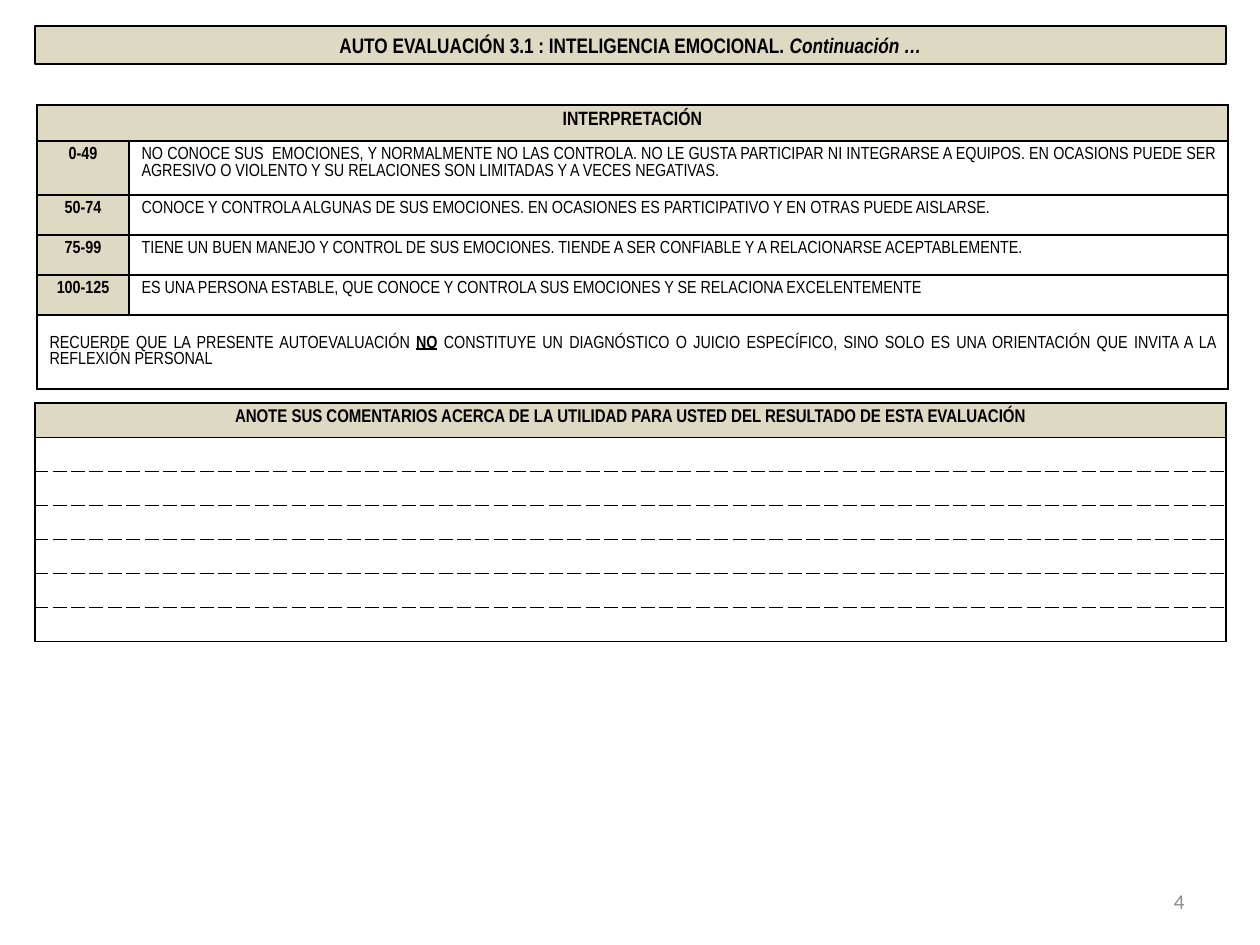
from lxml import etree
from pptx import Presentation, util as u
from pptx.dml.color import RGBColor
from pptx.enum import shapes, text
from pptx.oxml.ns import qn

# Content: each text is a list of (words, style letters) runs
TITLE = [("AUTO EVALUACIÓN 3.1 : INTELIGENCIA EMOCIONAL. ", "b"),
         ("Continuación …", "bi")]
INTERPRETATION = [("INTERPRETACIÓN", "b")]
SCORES = [
    ("0-49", "NO CONOCE SUS  EMOCIONES, Y NORMALMENTE NO LAS CONTROLA. NO LE GUSTA "
             "PARTICIPAR NI INTEGRARSE A EQUIPOS. EN OCASIONS PUEDE SER AGRESIVO O "
             "VIOLENTO Y SU RELACIONES SON LIMITADAS Y A VECES NEGATIVAS."),
    ("50-74", "CONOCE Y CONTROLA ALGUNAS DE SUS EMOCIONES. EN OCASIONES ES "
              "PARTICIPATIVO Y EN OTRAS PUEDE AISLARSE."),
    ("75-99", "TIENE UN BUEN MANEJO Y CONTROL DE SUS EMOCIONES. TIENDE A SER "
              "CONFIABLE Y A RELACIONARSE ACEPTABLEMENTE."),
    ("100-125", "ES UNA PERSONA ESTABLE, QUE CONOCE Y CONTROLA SUS EMOCIONES Y SE "
                "RELACIONA EXCELENTEMENTE"),
]
REMINDER = [("RECUERDE QUE LA PRESENTE AUTOEVALUACIÓN ", ""), ("NO", "bu"),
            (" CONSTITUYE UN DIAGNÓSTICO O JUICIO ESPECÍFICO, SINO SOLO ES UNA "
             "ORIENTACIÓN QUE INVITA A LA REFLEXIÓN PERSONAL", "")]
COMMENTS = [("ANOTE SUS COMENTARIOS ACERCA DE LA UTILIDAD PARA USTED DEL RESULTADO "
             "DE ESTA EVALUACIÓN", "b")]
BLANK_LINES = 6
PAGE = [("4", "")]

BEIGE, BLACK, WHITE, GRAY = "DDD9C3", "000000", "FFFFFF", "8C8C8C"
NARROW = "Arial Narrow"
CENTER, JUSTIFY, RIGHT = (text.PP_ALIGN.CENTER, text.PP_ALIGN.JUSTIFY,
                          text.PP_ALIGN.RIGHT)
MIDDLE = text.MSO_ANCHOR.MIDDLE


def px(n):
    return round(n * 914400 / 126)


def color(value):
    return RGBColor.from_string(value)


def write(frame, runs, size, align, font=NARROW, ink=BLACK):
    paragraph = frame.paragraphs[0]
    paragraph.alignment = align
    for words, style in runs:
        run = paragraph.add_run()
        run.text = words
        run.font.name, run.font.size = font, u.Pt(size)
        run.font.color.rgb = color(ink)
        run.font.bold = "b" in style
        run.font.italic = "i" in style
        run.font.underline = "u" in style


def paint(cell, fill=None, top="solid", bottom="solid"):
    if fill:
        cell.fill.solid()
        cell.fill.fore_color.rgb = color(fill)
    else:
        cell.fill.background()
    # Borders come before the fill in the cell properties
    props = cell._tc.get_or_add_tcPr()
    edges = {"lnL": "solid", "lnR": "solid", "lnT": top, "lnB": bottom}
    for i, (edge, dash) in enumerate(edges.items()):
        line = etree.Element(qn("a:" + edge), w=str(u.Pt(1)))
        ink = etree.SubElement(line, qn("a:solidFill"))
        etree.SubElement(ink, qn("a:srgbClr"), val=BLACK)
        etree.SubElement(line, qn("a:prstDash"), val=dash)
        props.insert(i, line)


def add_grid(left, top, widths, heights):
    grid = slide.shapes.add_table(len(heights), len(widths), px(left), px(top),
                                  px(sum(widths)), px(sum(heights))).table
    grid.first_row = grid.horz_banding = False
    for column, width in zip(grid.columns, widths):
        column.width = px(width)
    for row, height in zip(grid.rows, heights):
        row.height = px(height)
    return grid


prs = Presentation()
prs.slide_width, prs.slide_height = px(1260), px(945)
slide = prs.slides.add_slide(prs.slide_layouts[6])

# Interpretation table
scale = add_grid(37, 105, [92, 1099], [36, 54, 40, 40, 40, 74])
last = len(SCORES) + 1
for row in (0, last):
    scale.cell(row, 0).merge(scale.cell(row, 1))
    for column in (0, 1):
        paint(scale.cell(row, column), BEIGE if row == 0 else None)
write(scale.cell(0, 0).text_frame, INTERPRETATION, 11, CENTER)
for row, (score, meaning) in enumerate(SCORES, 1):
    score_cell, meaning_cell = scale.cell(row, 0), scale.cell(row, 1)
    paint(score_cell, BEIGE)
    paint(meaning_cell)
    write(score_cell.text_frame, [(score, "b")], 10, CENTER)
    write(meaning_cell.text_frame, [(meaning, "")], 10, JUSTIFY)
reminder_cell = scale.cell(last, 0)
reminder_cell.vertical_anchor = MIDDLE
write(reminder_cell.text_frame, REMINDER, 10, JUSTIFY)

# Title bar
title = slide.shapes.add_shape(shapes.MSO_SHAPE.RECTANGLE,
                               px(35), px(26), px(1191), px(38))
title.shadow.inherit = False
title.fill.solid()
title.fill.fore_color.rgb = color(BEIGE)
title.line.color.rgb = color(BLACK)
title.line.width = u.Pt(0.75)
title.text_frame.word_wrap = True
title.text_frame.vertical_anchor = MIDDLE
write(title.text_frame, TITLE, 12, CENTER)

# Page number
page = slide.shapes.add_textbox(px(903), px(876), px(294), px(50))
page.text_frame.word_wrap = True
page.text_frame.vertical_anchor = MIDDLE
write(page.text_frame, PAGE, 12, RIGHT, font="Calibri", ink=GRAY)

# Comment lines, dashed between the rows
notes = add_grid(35, 403, [1191], [34] * (BLANK_LINES + 1))
paint(notes.cell(0, 0), BEIGE)
write(notes.cell(0, 0).text_frame, COMMENTS, 10.5, CENTER)
for row in range(1, BLANK_LINES + 1):
    blank = notes.cell(row, 0)
    paint(blank, WHITE, top="solid" if row == 1 else "sysDash",
          bottom="solid" if row == BLANK_LINES else "sysDash")
    # A small empty-line size keeps the row from growing
    etree.SubElement(blank.text_frame.paragraphs[0]._p, qn("a:endParaRPr"), sz="1000")

prs.save("out.pptx")
